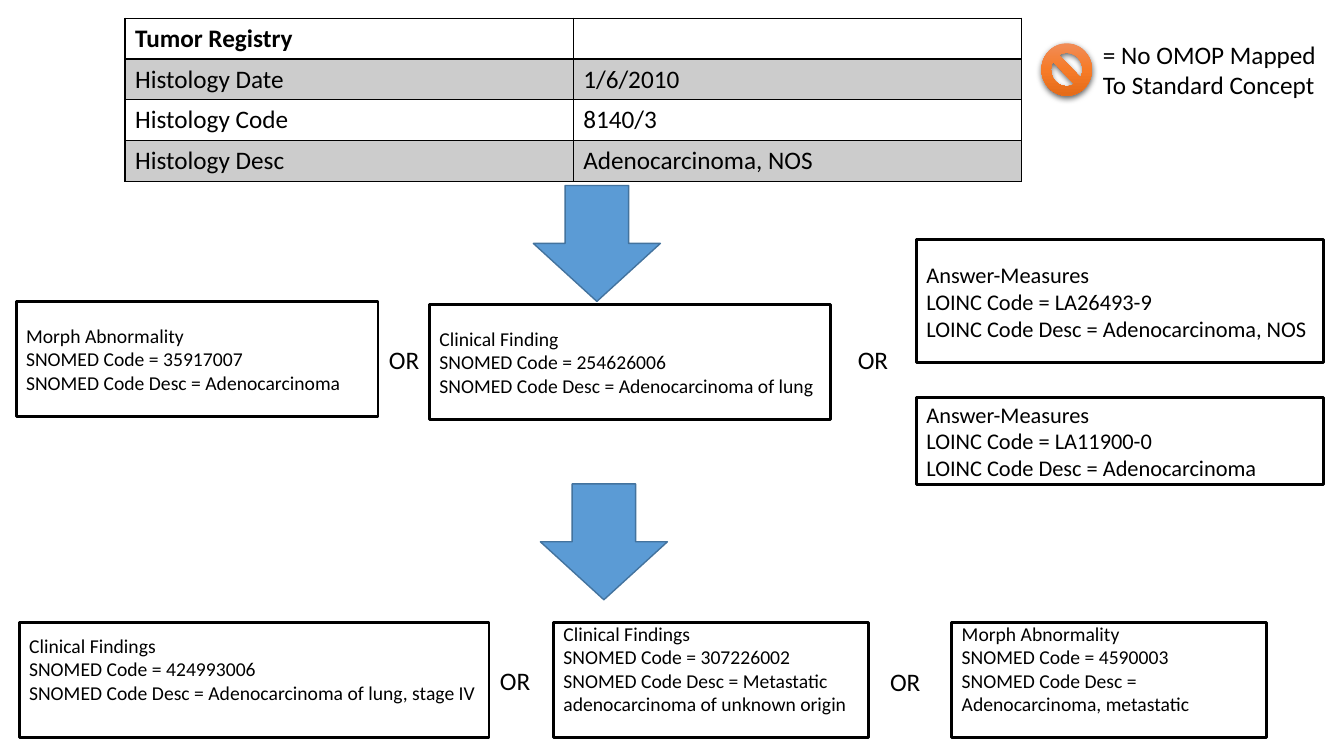
from dataclasses import dataclass

from pptx import Presentation
from pptx.dml.color import RGBColor
from pptx.enum.shapes import MSO_SHAPE
from pptx.enum.text import MSO_ANCHOR, MSO_AUTO_SIZE, PP_ALIGN
from pptx.oxml import parse_xml
from pptx.oxml.ns import nsdecls
from pptx.util import Inches, Pt

RECTANGLE = MSO_SHAPE.RECTANGLE
DOWN_ARROW = MSO_SHAPE.DOWN_ARROW
NO_SYMBOL = MSO_SHAPE.NO_SYMBOL
MIDDLE = MSO_ANCHOR.MIDDLE
LEFT = PP_ALIGN.LEFT
FIT_SHAPE = MSO_AUTO_SIZE.SHAPE_TO_FIT_TEXT


@dataclass(frozen=True)
class Theme:
    font: str = "Calibri"
    black: str = "000000"
    white: str = "FFFFFF"
    arrow: str = "5B9BD5"
    arrow_edge: str = "43739E"
    symbol: tuple = ((0, "F18C57"), (50, "F67B28"), (100, "E56C19"))
    body: int = 18
    answer: int = 16
    finding: int = 14
    thin: int = 1
    thick: int = 2


THEME = Theme()

REGISTRY = (
    ("Tumor Registry", ""),
    ("Histology Date", "1/6/2010"),
    ("Histology Code", "8140/3"),
    ("Histology Desc", "Adenocarcinoma, NOS"),
)

SOURCE_CONCEPTS = (
    (0.16, 2.99, 3.59, 1.14, THEME.finding,
     ("Morph Abnormality", "SNOMED Code = 35917007",
      "SNOMED Code Desc = Adenocarcinoma")),
    (4.26, 3.02, 3.98, 1.14, THEME.finding,
     ("Clinical Finding", "SNOMED Code = 254626006",
      "SNOMED Code Desc = Adenocarcinoma of lung")),
    (9.09, 2.38, 4.04, 1.22, THEME.answer,
     ("Answer-Measures", "LOINC Code = LA26493-9",
      "LOINC Code Desc = Adenocarcinoma, NOS")),
    (9.09, 3.94, 4.04, 0.87, THEME.answer,
     ("Answer-Measures", "LOINC Code = LA11900-0",
      "LOINC Code Desc = Adenocarcinoma")),
)

STAGED_CONCEPTS = (
    (0.19, 4.66,
     ("Clinical Findings", "SNOMED Code = 424993006",
      "SNOMED Code Desc = Adenocarcinoma of lung, stage IV")),
    (5.49, 3.12,
     ("Clinical Findings", "SNOMED Code = 307226002",
      "SNOMED Code Desc = Metastatic adenocarcinoma of unknown origin")),
    (9.44, 3.12,
     ("Morph Abnormality", "SNOMED Code = 4590003",
      "SNOMED Code Desc = Adenocarcinoma, metastatic")),
)

ARROWS = ((5.29, 1.84), (5.36, 4.8))
OR_LABELS = ((3.76, 3.37), (8.41, 3.37), (4.86, 6.55), (8.73, 6.56))


def rgb(value):
    return RGBColor.from_string(value)


def style_text(frame, size, bold=False):
    for para in frame.paragraphs:
        para.alignment = LEFT
        for span in para.runs:
            span.font.name = THEME.font
            span.font.size = Pt(size)
            span.font.bold = bold
            span.font.color.rgb = rgb(THEME.black)


def add_outlined(page, kind, place, fill, edge, width):
    shape = page.shapes.add_shape(kind, *map(Inches, place))
    shape.shadow.inherit = False
    shape.fill.solid()
    shape.fill.fore_color.rgb = rgb(fill)
    shape.line.color.rgb = rgb(edge)
    shape.line.width = Pt(width)
    return shape


def add_concept(page, place, lines, size, space_above=0.05, space_below=0.05):
    box = add_outlined(page, RECTANGLE, place, THEME.white, THEME.black, THEME.thick)
    frame = box.text_frame
    frame.word_wrap = True
    frame.vertical_anchor = MIDDLE
    frame.margin_top = Inches(space_above)
    frame.margin_bottom = Inches(space_below)
    frame.text = "\n".join(lines)
    style_text(frame, size)


def add_label(page, place, text, wrap):
    frame = page.shapes.add_textbox(*map(Inches, place)).text_frame
    frame.word_wrap = wrap
    frame.auto_size = FIT_SHAPE
    frame.text = text
    style_text(frame, THEME.body)


def set_borders(cell, top, bottom):
    widths = {"lnL": THEME.thin, "lnR": THEME.thin, "lnT": top, "lnB": bottom}
    properties = cell._tc.get_or_add_tcPr()
    for index, (side, width) in enumerate(widths.items()):
        properties.insert(index, parse_xml(
            f'<a:{side} {nsdecls("a")} w="{Pt(width)}"><a:solidFill>'
            f'<a:srgbClr val="{THEME.black}"/></a:solidFill></a:{side}>'))


def shade(cell, opacity):
    cell.fill.solid()
    cell.fill.fore_color.rgb = rgb(THEME.black)
    color = cell._tc.tcPr.find(".//{*}srgbClr")
    color.append(parse_xml(f'<a:alpha {nsdecls("a")} val="{opacity * 1000}"/>'))


def add_registry(page):
    place = map(Inches, (1.24, 0.18, 8.89, 1.62))
    table = page.shapes.add_table(len(REGISTRY), 2, *place).table
    table.first_row = False
    table.horz_banding = False
    for row, texts in enumerate(REGISTRY):
        for column, text in enumerate(texts):
            cell = table.cell(row, column)
            cell.text = text
            style_text(cell.text_frame, THEME.body, bold=row == 0)
            if row % 2:
                shade(cell, 20)
            else:
                cell.fill.background()
            set_borders(cell,
                        top=THEME.thick if row == 1 else THEME.thin,
                        bottom=THEME.thick if row == 0 else THEME.thin)


def add_unmapped_symbol(page):
    place = map(Inches, (10.33, 0.43, 0.5, 0.52))
    symbol = page.shapes.add_shape(NO_SYMBOL, *place)
    symbol.line.fill.background()
    stops = "".join(
        f'<a:gs pos="{position * 1000}"><a:srgbClr val="{color}"/></a:gs>'
        for position, color in THEME.symbol)
    properties = symbol._element.spPr
    properties.insert(2, parse_xml(
        f'<a:gradFill {nsdecls("a")} rotWithShape="1"><a:gsLst>{stops}</a:gsLst>'
        '<a:lin ang="5400000" scaled="0"/></a:gradFill>'))
    properties.append(parse_xml(
        f'<a:effectLst {nsdecls("a")}><a:outerShdw blurRad="{Pt(4.5)}" '
        f'dist="{Pt(1.5)}" dir="5400000" algn="ctr" rotWithShape="0">'
        f'<a:srgbClr val="{THEME.black}"><a:alpha val="63000"/></a:srgbClr>'
        '</a:outerShdw></a:effectLst>'))


def main():
    deck = Presentation()
    deck.slide_width = Inches(13.33)
    deck.slide_height = Inches(7.5)
    page = deck.slides.add_slide(deck.slide_layouts[6])

    add_registry(page)
    for left, top in ARROWS:
        add_outlined(page, DOWN_ARROW, (left, top, 1.26, 1.15),
                     THEME.arrow, THEME.arrow_edge, THEME.thin)
    for *place, size, lines in SOURCE_CONCEPTS:
        add_concept(page, place, lines, size)
    for left, width, lines in STAGED_CONCEPTS:
        add_concept(page, (left, 6.18, width, 1.14), lines, THEME.finding,
                    space_above=0, space_below=0.23)
    for left, top in OR_LABELS:
        add_label(page, (left, top, 0.5, 0.4), "OR", wrap=False)
    add_label(page, (10.84, 0.34, 2.38, 0.71),
              "= No OMOP Mapped To Standard Concept", wrap=True)
    add_unmapped_symbol(page)
    deck.save("out.pptx")


if __name__ == "__main__":
    main()
